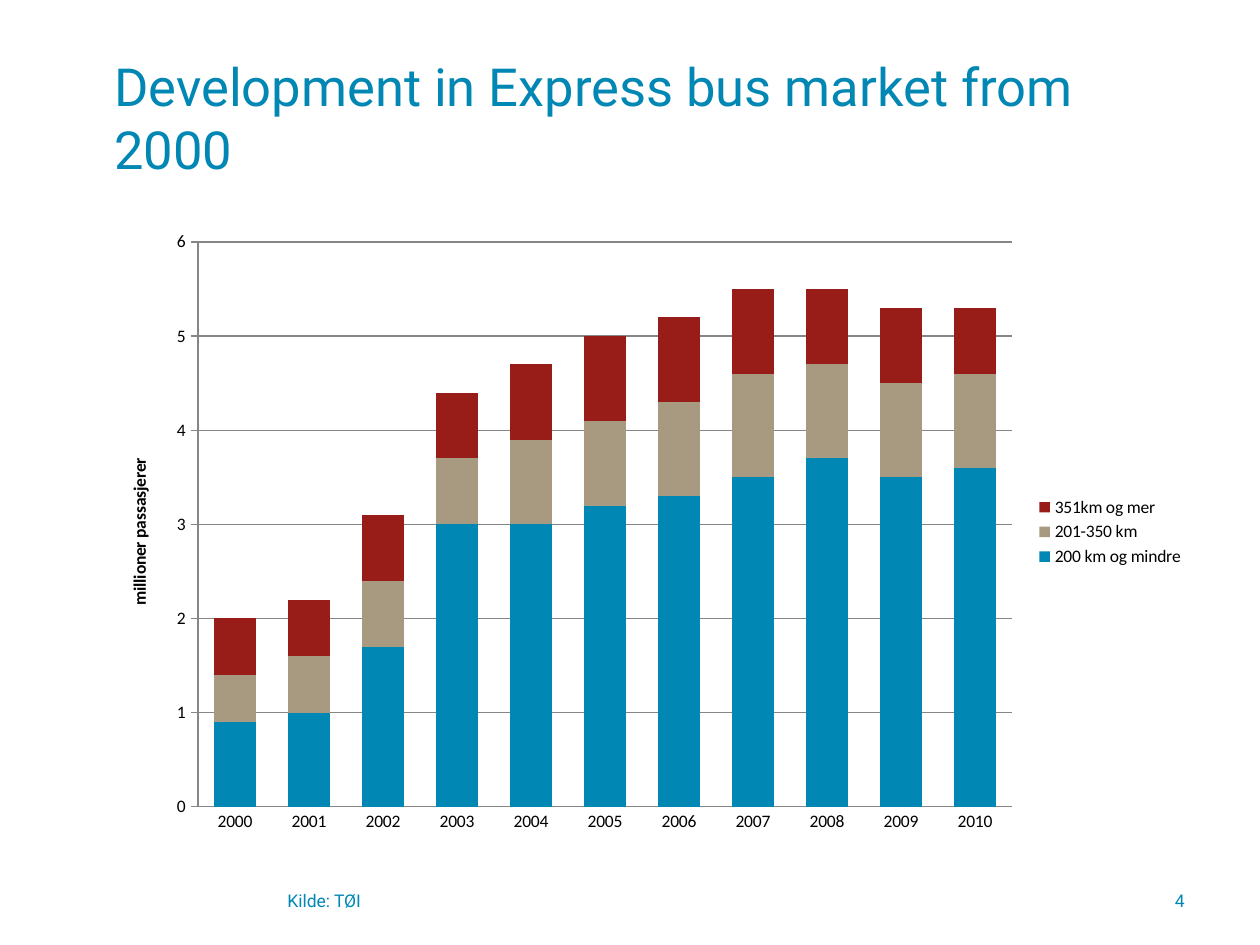
from lxml.etree import SubElement
from pptx import Presentation
from pptx.chart.data import CategoryChartData
from pptx.dml.color import RGBColor
from pptx.enum.chart import XL_CHART_TYPE, XL_LEGEND_POSITION, XL_TICK_MARK
from pptx.enum.text import MSO_ANCHOR, PP_ALIGN
from pptx.oxml.ns import qn
from pptx.util import Emu, Pt

PX = 914400 / 126
BLUE, SAND, RED = "0087B3", "A89A80", "981D19"
GRAY, BLACK = "868686", "000000"

YEARS = [str(year) for year in range(2000, 2011)]
SERIES = [
    ("200 km og mindre", BLUE,
     [0.9, 1, 1.7, 3, 3, 3.2, 3.3, 3.5, 3.7, 3.5, 3.6]),
    ("201-350 km", SAND,
     [0.5, 0.6, 0.7, 0.7, 0.9, 0.9, 1, 1.1, 1, 1, 1]),
    ("351km og mer", RED,
     [0.6, 0.6, 0.7, 0.7, 0.8, 0.9, 0.9, 0.9, 0.8, 0.8, 0.7]),
]


def emu(*lengths):
    return [Emu(round(n * PX)) for n in lengths]


def color(hex_value):
    return RGBColor.from_string(hex_value)


def set_attrs(obj, values):
    for name, value in values.items():
        setattr(obj, name, value)


def set_font(font, name, size, hex_value, bold=False):
    set_attrs(font, {"name": name, "size": Pt(size), "bold": bold})
    font.color.rgb = color(hex_value)


def add_text(s, box, text, size, align=PP_ALIGN.LEFT):
    tf = s.shapes.add_textbox(*emu(*box)).text_frame
    set_attrs(tf, {"word_wrap": True, "vertical_anchor": MSO_ANCHOR.MIDDLE})
    p = tf.paragraphs[0]
    p.alignment = align
    r = p.add_run()
    r.text = text
    set_font(r.font, "Roboto", size, BLUE)


def place_plot(chart, box, frame):
    """Fix the inner plot area at box, in px within the chart frame."""
    area = chart._chartSpace.chart.plotArea
    for old in area.findall(qn("c:layout")):
        area.remove(old)
    layout = SubElement(area, qn("c:layout"))
    area.insert(0, layout)
    manual = SubElement(layout, qn("c:manualLayout"))
    x, y, w, h = box
    values = {"layoutTarget": "inner", "xMode": "edge", "yMode": "edge",
              "x": x / frame[0], "y": y / frame[1],
              "w": w / frame[0], "h": h / frame[1]}
    for name, value in values.items():
        SubElement(manual, qn(f"c:{name}")).set("val", str(value))


def add_passenger_chart(s, box):
    data = CategoryChartData()
    data.categories = YEARS
    for name, _, values in SERIES:
        data.add_series(name, values)
    chart = s.shapes.add_chart(
        XL_CHART_TYPE.COLUMN_STACKED, *emu(*box), data).chart
    chart.has_title = False
    set_font(chart.font, "Calibri", 10, BLACK)
    place_plot(chart, (96, 22, 814, 565), box[2:])

    # Columns
    plot = chart.plots[0]
    set_attrs(plot, {"gap_width": 75, "overlap": 100, "vary_by_categories": False})
    for series, (_, fill, _) in zip(plot.series, SERIES):
        series.format.fill.solid()
        series.format.fill.fore_color.rgb = color(fill)

    # Axes
    cat, val = chart.category_axis, chart.value_axis
    cat.major_tick_mark = XL_TICK_MARK.NONE
    set_attrs(val, {"minimum_scale": 0, "maximum_scale": 6, "major_unit": 1,
                    "major_tick_mark": XL_TICK_MARK.OUTSIDE,
                    "has_major_gridlines": True})
    for part in (cat, val, val.major_gridlines):
        part.format.line.width = Pt(0.75)
        part.format.line.color.rgb = color(GRAY)
    p = val.axis_title.text_frame.paragraphs[0]
    r = p.add_run()
    r.text = "millioner passasjerer"
    set_font(r.font, "Calibri", 10, BLACK, bold=True)

    # Legend
    chart.has_legend = True
    set_attrs(chart.legend, {"position": XL_LEGEND_POSITION.RIGHT,
                             "include_in_layout": False})


def add_footer(s, box, source, number):
    x, y, w, h = box
    number_w = 84
    add_text(s, (x, y, 430, h), source, 10)
    add_text(s, (x + w - number_w, y, number_w, h), number, 10, PP_ALIGN.RIGHT)


def main():
    prs = Presentation()
    prs.slide_width, prs.slide_height = emu(1260, 945)
    s = prs.slides.add_slide(prs.slide_layouts[6])
    add_text(s, (102, 38, 1095, 158),
             "Development in Express bus market from 2000", 30)
    add_passenger_chart(s, (102, 220, 1095, 624))
    add_footer(s, (275, 876, 922, 50), "Kilde: TØI", "4")
    prs.save("out.pptx")


if __name__ == "__main__":
    main()
